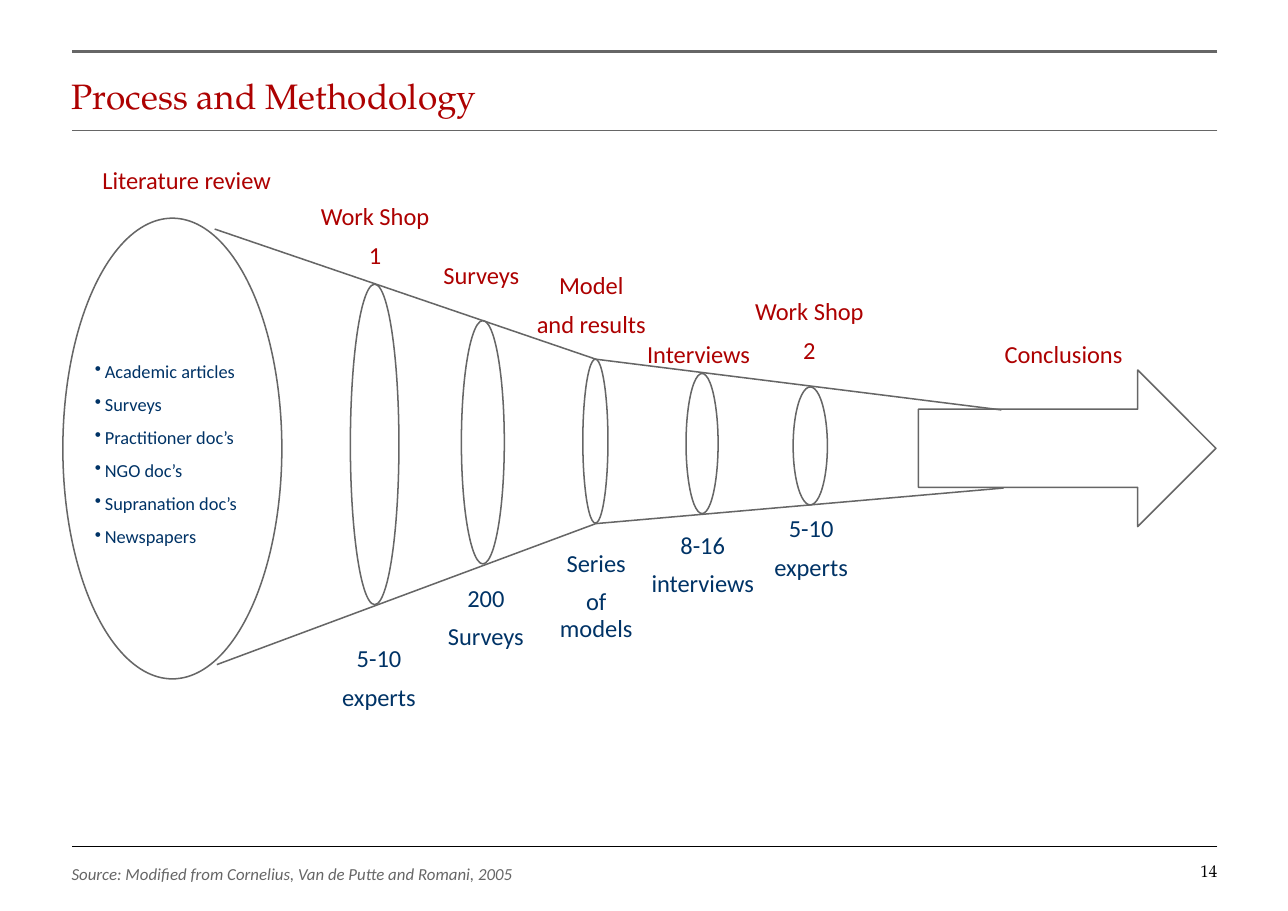
from lxml.etree import SubElement
from pptx import Presentation
from pptx.dml.color import RGBColor
from pptx.enum.shapes import MSO_CONNECTOR, MSO_SHAPE
from pptx.enum.text import MSO_ANCHOR, PP_ALIGN
from pptx.oxml.ns import qn
from pptx.util import Cm, Pt

RED, BLUE, GREY, BLACK = "AD0101", "003366", "666666", "000000"
SERIF, SANS = "TeX Gyre Pagella", "Calibri"
TITLE = "Process and Methodology"
SOURCE = "Source: Modified from Cornelius, Van de Putte and Romani, 2005"
PAGE = "14"
LEFT, RIGHT = 1.65, 28.07

# Lengths in cm: (y, colour, points)
RULES = [(1.19, GREY, 1.5), (3, GREY, 0.5), (19.51, BLACK, 0.25)]

DOCS = ["Academic articles", "Surveys", "Practitioner doc’s", "NGO doc’s",
        "Supranation doc’s", "Newspapers"]
MOUTH = (1.45, 5.03, 5.05, 10.62)
ARROW = (21.18, 8.53, 6.86, 3.61)

# Ring box, then the labels above and below it: (lines, left, top, width)
STAGES = [
    ((8.08, 6.55, 1.12, 7.39), (["Work Shop", "1"], 7.06, 4.72, 3.18),
     (["5-10", "experts"], 7.65, 14.91, 2.18)),
    ((10.64, 7.39, 0.99, 5.61), (["Surveys"], 9.65, 6.07, 2.9),
     (["200", "Surveys"], 9.86, 13.51, 2.69)),
    ((13.44, 8.28, 0.58, 3.78), (["Model", "and results"], 12.24, 6.3, 2.79),
     (["Series", "of models"], 12.67, 12.7, 2.16)),
    ((15.82, 8.61, 0.74, 3.23), (["Interviews"], 14.66, 7.9, 2.9),
     (["8-16", "interviews"], 14.86, 12.29, 2.69)),
    ((18.29, 8.92, 0.79, 2.72), (["Work Shop", "2"], 17.27, 6.91, 2.79),
     (["5-10", "experts"], 17.6, 11.91, 2.21)),
]
ENDS = [(["Literature review"], 2.26, 3.89, 4.09),
        (["Conclusions"], 23.09, 7.9, 2.87)]
EDGES = [[(4.95, 5.28), (13.74, 8.28), (23.09, 9.45)],
         [(5, 15.32), (13.74, 12.07), (23.14, 11.25)]]


def paint(hue):
    return RGBColor.from_string(hue)


def style(para, size, hue, face=SANS, align=PP_ALIGN.LEFT):
    para.alignment = align
    para.font.size = Pt(size)
    para.font.name = face
    para.font.color.rgb = paint(hue)


def inset(frame, top=0, bottom=0):
    frame.margin_left = frame.margin_right = 0
    frame.margin_top, frame.margin_bottom = Cm(top), Cm(bottom)


def fill(frame, lines):
    """Put one line in each paragraph and return the paragraphs."""
    frame.text = "\n".join(lines)
    return frame.paragraphs


def write(lines, x, y, w, h):
    """Add a text box without insets and return its frame."""
    frame = slide.shapes.add_textbox(Cm(x), Cm(y), Cm(w), Cm(h)).text_frame
    frame.word_wrap = True
    inset(frame)
    fill(frame, lines)
    return frame


def label(lines, x, y, w, hue):
    frame = write(lines, x, y, w, 0.64 + 0.93 * (len(lines) - 1))
    for i, para in enumerate(frame.paragraphs):
        style(para, 16, hue, align=PP_ALIGN.CENTER)
        para.line_spacing = 0.9
        para.space_before = Pt(8 if i else 0)


def line(start, end, hue=GREY, width=1):
    x1, y1, x2, y2 = map(Cm, (*start, *end))
    link = slide.shapes.add_connector(MSO_CONNECTOR.STRAIGHT, x1, y1, x2, y2)
    link.line.color.rgb = paint(hue)
    link.line.width = Pt(width)
    SubElement(link._element.spPr, qn("a:effectLst"))


def outline(kind, box):
    shape = slide.shapes.add_shape(kind, *map(Cm, box))
    shape.shadow.inherit = False
    shape.fill.background()
    shape.line.color.rgb = paint(GREY)
    shape.line.width = Pt(1)
    return shape


def bullet(para):
    props = para._p.get_or_add_pPr()
    props.set("marL", str(Cm(0.23)))
    props.set("indent", str(-Cm(0.23)))
    SubElement(props, qn("a:buChar")).set("char", "•")


deck = Presentation()
deck.slide_width, deck.slide_height = Cm(29.7), Cm(21)
slide = deck.slides.add_slide(deck.slide_layouts[5])

for y, hue, width in RULES:
    line((RIGHT, y), (LEFT, y), hue, width)

title = slide.shapes.title
title.left, title.top = Cm(LEFT), Cm(1.19)
title.width, title.height = Cm(RIGHT - LEFT), Cm(1.8)
head = title.text_frame
head.vertical_anchor = MSO_ANCHOR.MIDDLE
inset(head, top=0.2)
style(fill(head, [TITLE])[0], 23, RED, SERIF)

mouth = outline(MSO_SHAPE.OVAL, MOUTH).text_frame
mouth.word_wrap = False
mouth.vertical_anchor = MSO_ANCHOR.MIDDLE
inset(mouth, 0.1, 0.1)
for para in fill(mouth, DOCS):
    style(para, 12, BLUE)
    para.line_spacing = 1.5
    bullet(para)

for ring, above, below in STAGES:
    outline(MSO_SHAPE.OVAL, ring)
    label(*above, RED)
    label(*below, BLUE)
for end in ENDS:
    label(*end, RED)

for edge in EDGES:
    for start, end in zip(edge, edge[1:]):
        line(start, end)
outline(MSO_SHAPE.RIGHT_ARROW, ARROW)

note = write([SOURCE], LEFT, 19.91, 13, 0.48).paragraphs[0]
style(note, 11, GREY)
note.font.italic = True
folio = write([PAGE], 27, 19.71, 1.07, 0.74)
folio.vertical_anchor = MSO_ANCHOR.MIDDLE
style(folio.paragraphs[0], 11, BLACK, SERIF, PP_ALIGN.RIGHT)

deck.save("out.pptx")
